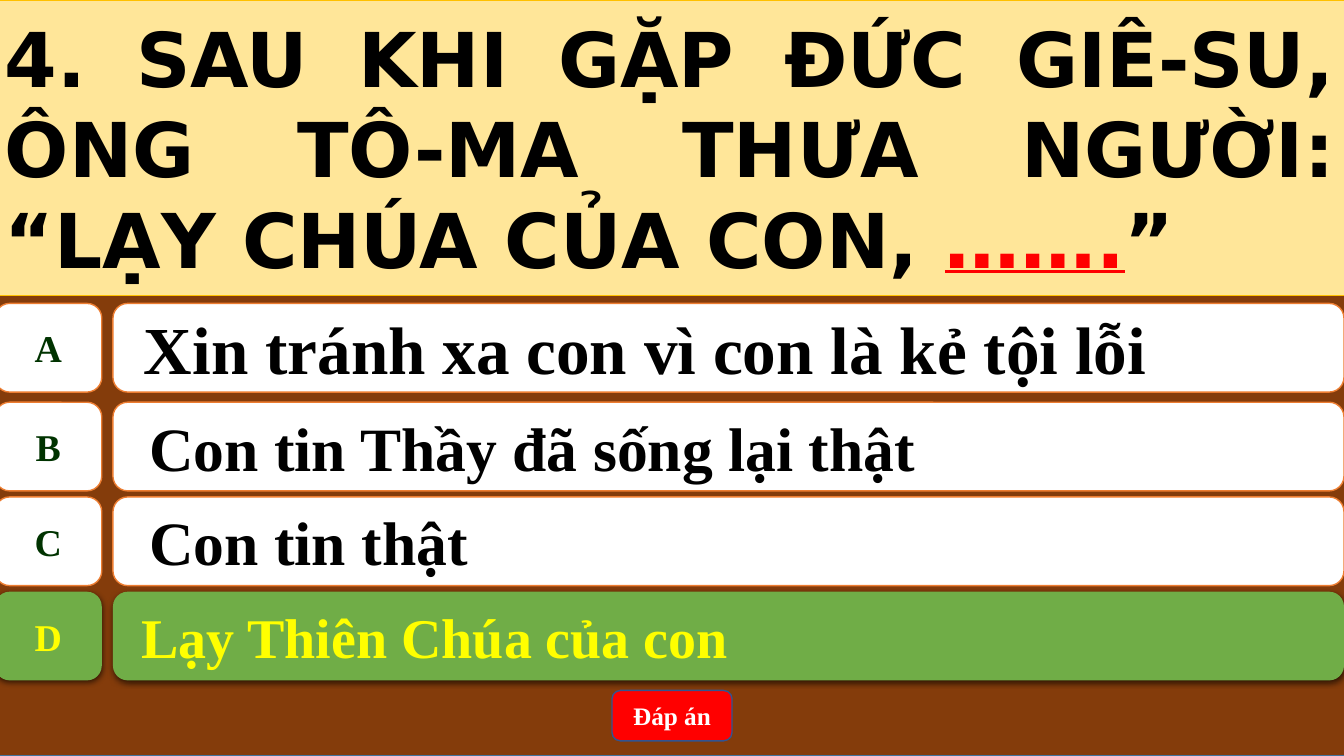
import dataclasses

import lxml.etree
import pptx
import pptx.dml.color
import pptx.enum.shapes
import pptx.enum.text
import pptx.oxml.ns
import pptx.shapes.autoshape
import pptx.util

Inches = pptx.util.Inches
Pt = pptx.util.Pt
Kind = pptx.enum.shapes.MSO_SHAPE
Align = pptx.enum.text.PP_ALIGN
qn = pptx.oxml.ns.qn

SERIF = {"name": "Times New Roman", "bold": True}
SANS = {"name": "DejaVu Sans", "bold": True, "size": Pt(54)}
LEFT, WIDTH = -0.05, 13.39
HIGH = 0.88


@dataclasses.dataclass
class Answer:
    letter: str
    text: str
    top: float
    size: int
    indent: bool = False
    right: bool = False


ANSWERS = [
    Answer("A", " Xin tránh xa con vì con là kẻ tội lỗi", 3.01, 48),
    Answer("B", "Con tin Thầy đã sống lại thật", 3.99, 44, indent=True),
    Answer("C", "Con tin thật", 4.93, 44, indent=True),
    Answer("D", " Lạy Thiên Chúa của con", 5.87, 40, right=True),
]


def color(code: str) -> pptx.dml.color.RGBColor:
    return pptx.dml.color.RGBColor.from_string(code)


def box(slide, kind, left: float, top: float, width: float, height: float,
        fill: str, line: str = "", weight: float = 1) -> pptx.shapes.autoshape.Shape:
    shape = slide.shapes.add_shape(
        kind, Inches(left), Inches(top), Inches(width), Inches(height))
    shape.shadow.inherit = False
    shape.fill.solid()
    shape.fill.fore_color.rgb = color(fill)
    if line:
        shape.line.color.rgb = color(line)
        shape.line.width = Pt(weight)
    else:
        shape.line.fill.background()
    frame = shape.text_frame
    frame.word_wrap = True
    frame.vertical_anchor = pptx.enum.text.MSO_ANCHOR.MIDDLE
    return shape


def write(shape: pptx.shapes.autoshape.Shape, text: str, ink: str,
          align: Align, style: dict) -> None:
    para = shape.text_frame.paragraphs[0]
    para.alignment = align
    run = para.add_run()
    run.text = text
    for key, value in style.items():
        setattr(run.font, key, value)
    run.font.color.rgb = color(ink)


def shade(shape: pptx.shapes.autoshape.Shape) -> None:
    """Cast a soft shadow straight down."""
    effects = shape._element.spPr.find(qn("a:effectLst"))
    outer = lxml.etree.SubElement(
        effects, qn("a:outerShdw"), blurRad=str(Pt(4.5)), dist=str(Pt(1.5)),
        dir="5400000", algn="ctr", rotWithShape="0")
    tint = lxml.etree.SubElement(outer, qn("a:srgbClr"), val="000000")
    lxml.etree.SubElement(tint, qn("a:alpha"), val="63000")


def draw(slide, answer: Answer) -> None:
    fill, line = ("70AD47", "") if answer.right else ("FFFFFF", "ED7D31")
    bar = box(slide, Kind.ROUNDED_RECTANGLE, 1.12, answer.top, 12.21, HIGH, fill, line)
    tag = box(slide, Kind.FLOWCHART_ALTERNATE_PROCESS, LEFT, answer.top, 1.06, HIGH,
              fill, line)
    tag.text_frame.word_wrap = False
    write(bar, answer.text, "FFFF00" if answer.right else "000000", Align.LEFT,
          SERIF | {"size": Pt(answer.size)})
    write(tag, answer.letter, "FFFF00" if answer.right else "003300", Align.CENTER,
          SERIF | {"size": Pt(27)})
    if answer.indent:
        para = bar.text_frame.paragraphs[0]
        para.level = 1
        props = para._p.get_or_add_pPr()
        props.set("marL", str(Inches(0.5)))
        props.set("indent", str(Inches(-0.28)))
    if answer.right:
        shade(bar)
        shade(tag)


def main() -> None:
    deck = pptx.Presentation()
    deck.slide_width, deck.slide_height = Inches(13.33), Inches(7.5)
    slide = deck.slides.add_slide(deck.slide_layouts[6])

    # Backdrop
    box(slide, Kind.RECTANGLE, LEFT, 0, WIDTH, 7.5, "843C0B", "43739E")

    # Question
    panel = box(slide, Kind.RECTANGLE, LEFT, 0, WIDTH, 2.93, "FFE699", "FFC000", 0.5)
    for text, ink, under in [
        ("4. SAU KHI GẶP ĐỨC GIÊ-SU, ÔNG TÔ-MA THƯA NGƯỜI: “LẠY CHÚA CỦA CON, ",
         "000000", False),
        ("…….", "FF0000", True),
        ("”", "000000", False),
    ]:
        write(panel, text, ink, Align.JUSTIFY, SANS | {"underline": under})

    # Answers
    for answer in ANSWERS:
        draw(slide, answer)

    # Button
    button = box(slide, Kind.ROUNDED_RECTANGLE, 6.07, 6.85, 1.19, 0.5, "FF0000", "325491")
    write(button, "Đáp án", "FFFFFF", Align.CENTER, SERIF | {"size": Pt(18)})

    deck.save("out.pptx")


if __name__ == "__main__":
    main()
